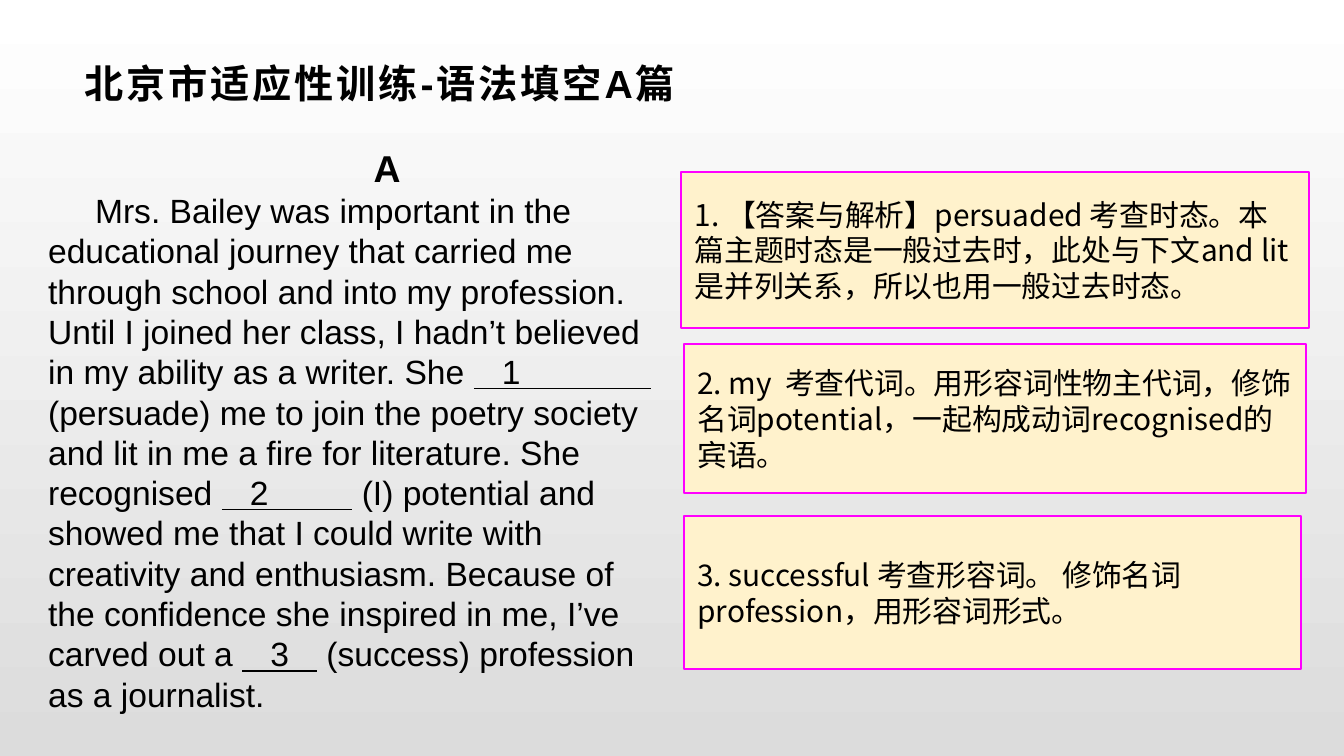
"""Build a grammar exercise slide with a cloze passage and three answer notes."""
import pptx
import pptx.util
import pptx.dml.color
import pptx.enum.shapes
import pptx.enum.text
import pptx.oxml.ns
import lxml.etree

Inches, Pt = pptx.util.Inches, pptx.util.Pt
RGB = pptx.dml.color.RGBColor.from_string
ANCHOR = pptx.enum.text.MSO_ANCHOR

theme = {
    "latin": "Arial", "cjk": "Noto Sans CJK SC",
    "text": "000000", "note": "FFF2CC", "border": "FF00FF",
    "bg": ("FFFFFF", "DCDCDC"),
    "title": 21, "heading": 20, "body": 18, "small": 16,
}


def add_run(p, text, size, font, bold=False, underline=False):
    r = p.add_run()
    r.text = text
    r.font.size = Pt(theme[size])
    r.font.name = theme[font]
    r.font.bold = bold
    r.font.underline = underline
    r.font.color.rgb = RGB(theme["text"])
    ea = lxml.etree.SubElement(r.font._element, pptx.oxml.ns.qn("a:ea"))
    ea.set("typeface", theme["cjk"])
    return r


prs = pptx.Presentation()
prs.slide_width = Inches(10)
prs.slide_height = prs.slide_width * 9 // 16
s = prs.slides.add_slide(prs.slide_layouts[5])
fill = s.background.fill
fill.gradient()
fill.gradient_angle = 270
for stop, color in zip(fill.gradient_stops, theme["bg"]):
    stop.color.rgb = RGB(color)

sp = s.shapes.title
sp.left, sp.top, sp.width, sp.height = map(Inches, (0.55, 0.35, 8.9, 0.53))
tf = sp.text_frame
tf.auto_size = pptx.enum.text.MSO_AUTO_SIZE.NONE
tf.vertical_anchor = ANCHOR.MIDDLE
tf.margin_left, tf.margin_right = Inches(0.08), Inches(0.06)
tf.margin_top = tf.margin_bottom = Inches(0.03)
p = tf.paragraphs[0]
p.alignment = pptx.enum.text.PP_ALIGN.LEFT
r = add_run(p, "北京市适应性训练-语法填空A篇", "title", "latin", bold=True)
r.font._element.set("spc", "150")

sp = s.shapes.add_textbox(Inches(0.26), Inches(1.03), Inches(4.74), Inches(4.38))
tf = sp.text_frame
tf.word_wrap = True
p = tf.paragraphs[0]
p.alignment = pptx.enum.text.PP_ALIGN.CENTER
p.level = 1
p._p.get_or_add_pPr().set("marL", "0")
p._p.get_or_add_pPr().set("indent", str(Inches(0.5)))
add_run(p, "A", "heading", "latin", bold=True)

passage = [
    "Mrs. Bailey was important in the educational journey that carried me through "
    "school and into my profession. Until I joined her class, I hadn’t believed in "
    "my ability as a writer. She ",
    "   1              ",
    " (persuade) me to join the poetry society and lit in me a fire for literature. "
    "She recognised ",
    "   2         ",
    " (I) potential and showed me that I could write with creativity and enthusiasm. "
    "Because of the confidence she inspired in me, I’ve carved out a ",
    "   3   ",
    " (success) profession as a journalist.",
]
p = tf.add_paragraph()
p._p.get_or_add_pPr().set("indent", str(Inches(0.35)))
for i, text in enumerate(passage):
    add_run(p, text, "body", "latin", underline=i % 2 == 1)

notes = [
    (5.07, 1.28, 4.67, 1.16, "1. 【答案与解析】persuaded 考查时态。本篇主题时态是一般过去时，"
     "此处与下文and lit 是并列关系，所以也用一般过去时态。"),
    (5.09, 2.56, 4.63, 1.11, "2. my  考查代词。用形容词性物主代词，修饰名词potential，"
     "一起构成动词recognised的宾语。"),
    (5.09, 3.84, 4.59, 1.14, "3. successful 考查形容词。 修饰名词profession，用形容词形式。"),
]
for *box, text in notes:
    sp = s.shapes.add_shape(pptx.enum.shapes.MSO_SHAPE.RECTANGLE, *map(Inches, box))
    sp.shadow.inherit = False
    sp.fill.solid()
    sp.fill.fore_color.rgb = RGB(theme["note"])
    sp.line.color.rgb = RGB(theme["border"])
    sp.line.width = Pt(1)
    tf = sp.text_frame
    tf.word_wrap = True
    tf.vertical_anchor = ANCHOR.MIDDLE
    p = tf.paragraphs[0]
    p.alignment = pptx.enum.text.PP_ALIGN.LEFT
    add_run(p, text, "small", "cjk")

prs.save("out.pptx")
